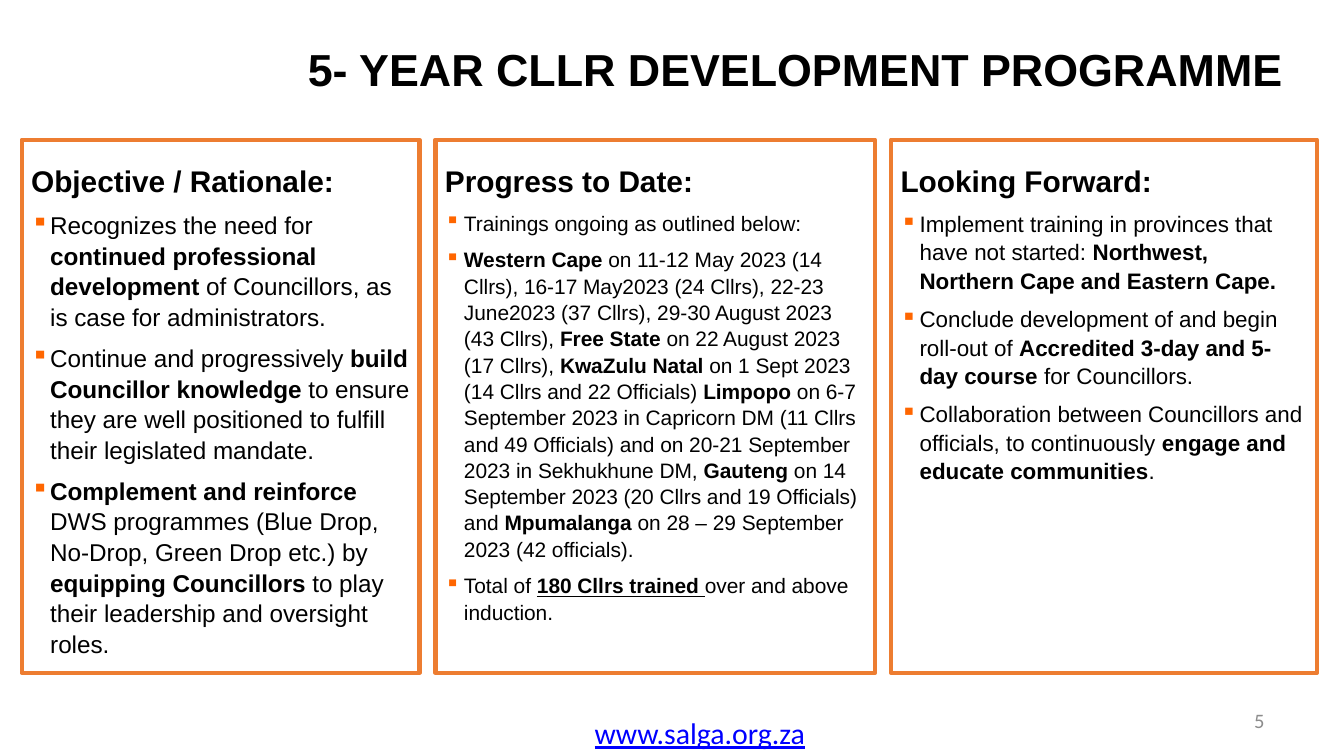
from dataclasses import dataclass

from lxml.etree import SubElement
from pptx import Presentation
from pptx.dml.color import RGBColor
from pptx.enum.shapes import MSO_SHAPE
from pptx.enum.text import MSO_ANCHOR, PP_ALIGN
from pptx.oxml.ns import qn
from pptx.util import Cm, Pt


@dataclass(frozen=True)
class Theme:
    """Colours, fonts and type sizes of the slide."""

    ink: RGBColor = RGBColor(0x00, 0x00, 0x00)
    border: RGBColor = RGBColor(0xED, 0x7D, 0x31)
    bullet: str = "FF6600"
    link: RGBColor = RGBColor(0x00, 0x00, 0xFF)
    page: RGBColor = RGBColor(0x8C, 0x8C, 0x8C)
    body_font: str = "Arial"
    footer_font: str = "Calibri"
    title_size: float = 24
    heading_size: float = 16
    link_size: float = 16
    page_size: float = 11


THEME = Theme()

COLUMNS = [
    (7.52, 13, "Objective / Rationale:", [
        "Recognizes the need for *continued professional development* of Councillors, "
        "as is case for administrators.",
        "Continue and progressively *build Councillor knowledge* to ensure they are "
        "well positioned to fulfill their legislated mandate.",
        "*Complement and reinforce* DWS programmes (Blue Drop, No-Drop, Green Drop etc.) "
        "by *equipping Councillors* to play their leadership and oversight roles.",
    ]),
    (8.31, 11.2, "Progress to Date:", [
        "Trainings ongoing as outlined below:",
        "*Western Cape* on 11-12 May 2023 (14 Cllrs), 16-17 May2023 (24 Cllrs), "
        "22-23 June2023 (37 Cllrs), 29-30 August 2023 (43 Cllrs), "
        "*Free State *on 22 August 2023 (17 Cllrs), "
        "*KwaZulu Natal* on 1 Sept 2023 (14 Cllrs and 22 Officials) "
        "*Limpopo* on 6-7 September 2023 in Capricorn DM (11 Cllrs and 49 Officials) "
        "and on 20-21 September 2023 in Sekhukhune DM, "
        "*Gauteng* on 14 September 2023 (20 Cllrs and 19 Officials) and "
        "*Mpumalanga* on 28 – 29 September 2023 (42 officials).",
        "Total of *_180 Cllrs trained _*over and above induction.",
    ]),
    (8.05, 12, "Looking Forward:", [
        "Implement training in provinces that have not started: "
        "*Northwest, Northern Cape and Eastern Cape.*",
        "Conclude development of and begin roll-out of "
        "*Accredited 3-day and 5-day course *for Councillors.",
        "Collaboration between Councillors and officials, to continuously "
        "*engage and educate communities*.",
    ]),
]


def set_frame(frame, side, anchor):
    """Wrap a text frame and set its insets and anchor."""
    frame.word_wrap = True
    frame.margin_left = frame.margin_right = Cm(side)
    frame.margin_top = frame.margin_bottom = Cm(0.1)
    frame.vertical_anchor = anchor


def style_font(font, name, size, color, bold=False, underline=False):
    """Apply typeface, size, colour and emphasis to a font."""
    font.name, font.size = name, Pt(size)
    font.bold, font.underline = bold, underline
    font.color.rgb = color


def add_label(slide, box, text, align, anchor, **style):
    """Place one line of text in the given box."""
    frame = slide.shapes.add_textbox(*map(Cm, box)).text_frame
    set_frame(frame, 0.23, anchor)
    frame.text = text
    paragraph = frame.paragraphs[0]
    paragraph.alignment = align
    style_font(paragraph.runs[0].font, **style)


def add_point(frame, text, size):
    """Append a bulleted point, with *bold* and *_bold underlined_* parts."""
    point = frame.add_paragraph()
    properties = point._p.get_or_add_pPr()
    properties.set("marL", str(Cm(0.36)))
    properties.set("indent", str(-Cm(0.36)))
    point.line_spacing = 1.05
    point.space_before = Pt(5.6)
    bullet_color = SubElement(properties, qn("a:buClr"))
    SubElement(bullet_color, qn("a:srgbClr"), val=THEME.bullet)
    SubElement(properties, qn("a:buChar"), char="▪")
    for index, part in enumerate(text.split("*")):
        if part:
            run = point.add_run()
            run.text = part.strip("_")
            style_font(run.font, THEME.body_font, size, THEME.ink,
                       bold=index % 2 == 1, underline=part.startswith("_"))


def add_column(slide, box, heading, points, size):
    """Draw an outlined panel with a heading and its points."""
    panel = slide.shapes.add_shape(MSO_SHAPE.RECTANGLE, *map(Cm, box))
    panel.shadow.inherit = False
    panel.fill.background()
    panel.line.color.rgb = THEME.border
    panel.line.width = Pt(2.25)
    frame = panel.text_frame
    set_frame(frame, 0.18, MSO_ANCHOR.TOP)
    frame.text = heading
    title = frame.paragraphs[0]
    title.line_spacing = 1.5
    style_font(title.runs[0].font, THEME.body_font, THEME.heading_size, THEME.ink, bold=True)
    for text in points:
        add_point(frame, text, size)
    for paragraph in frame.paragraphs:
        paragraph.alignment = PP_ALIGN.LEFT


def add_columns(slide, left, top, height, gap):
    """Lay the panels side by side with equal gaps."""
    for width, size, heading, points in COLUMNS:
        add_column(slide, (left, top, width, height), heading, points, size)
        left += width + gap


def add_footer(slide, link_box, page_box):
    """Place the web address and the page number."""
    add_label(slide, link_box, "www.salga.org.za", PP_ALIGN.CENTER, MSO_ANCHOR.TOP,
              name=THEME.footer_font, size=THEME.link_size, color=THEME.link, underline=True)
    add_label(slide, page_box, "5", PP_ALIGN.RIGHT, MSO_ANCHOR.MIDDLE,
              name=THEME.footer_font, size=THEME.page_size, color=THEME.page)


def main():
    """Build and save the slide."""
    presentation = Presentation()
    presentation.slide_width, presentation.slide_height = Cm(25.4), Cm(14.29)
    slide = presentation.slides.add_slide(presentation.slide_layouts[6])
    add_label(slide, (5.16, 0.53, 19.74, 1.52), "5- YEAR CLLR DEVELOPMENT PROGRAMME",
              PP_ALIGN.CENTER, MSO_ANCHOR.MIDDLE, name=THEME.body_font,
              size=THEME.title_size, color=THEME.ink, bold=True)
    add_columns(slide, left=0.41, top=2.64, height=10.08, gap=0.3)
    add_footer(slide, (10.36, 13.41, 5.74, 0.91), (18.21, 13.23, 5.92, 0.76))
    presentation.save("out.pptx")


if __name__ == "__main__":
    main()
